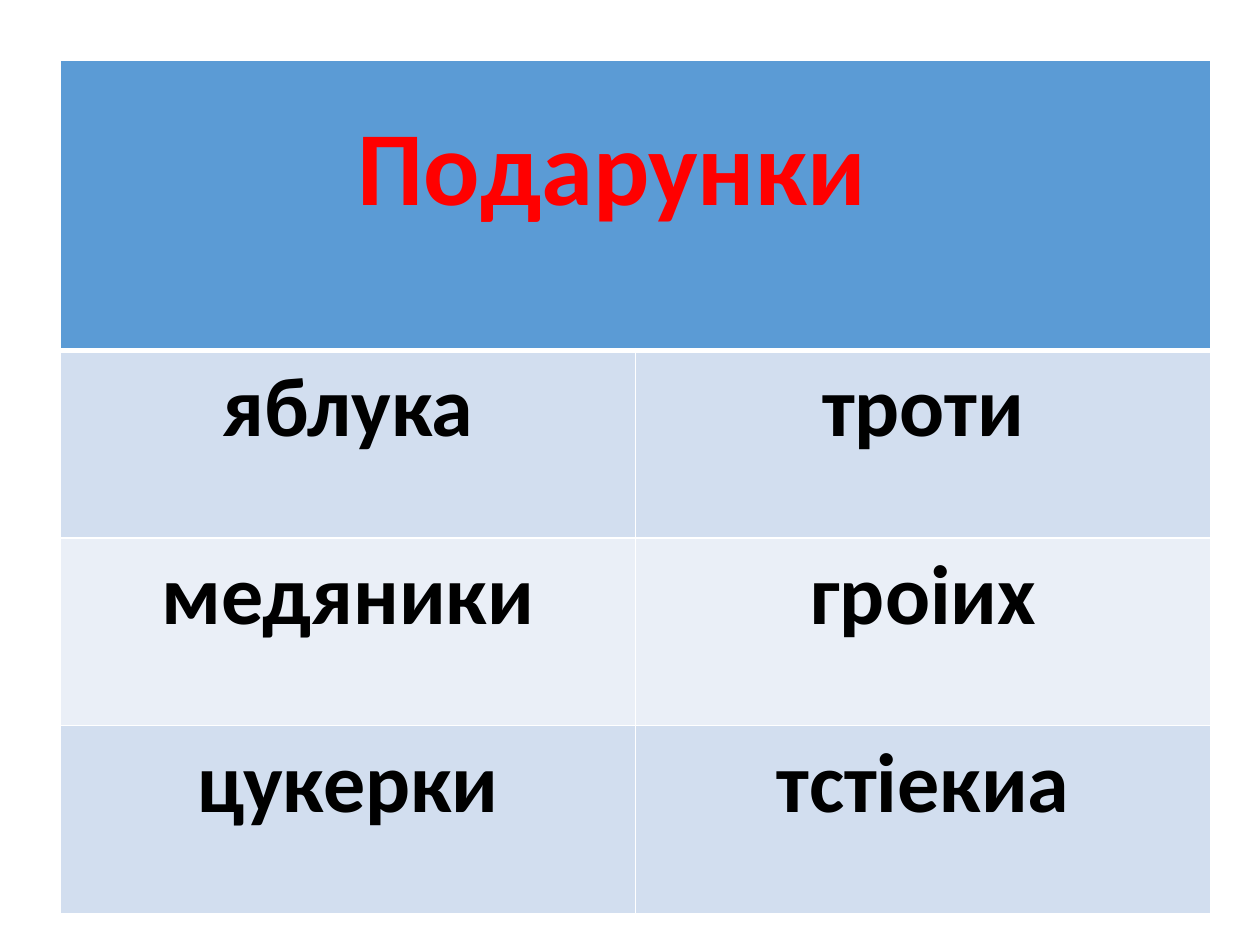
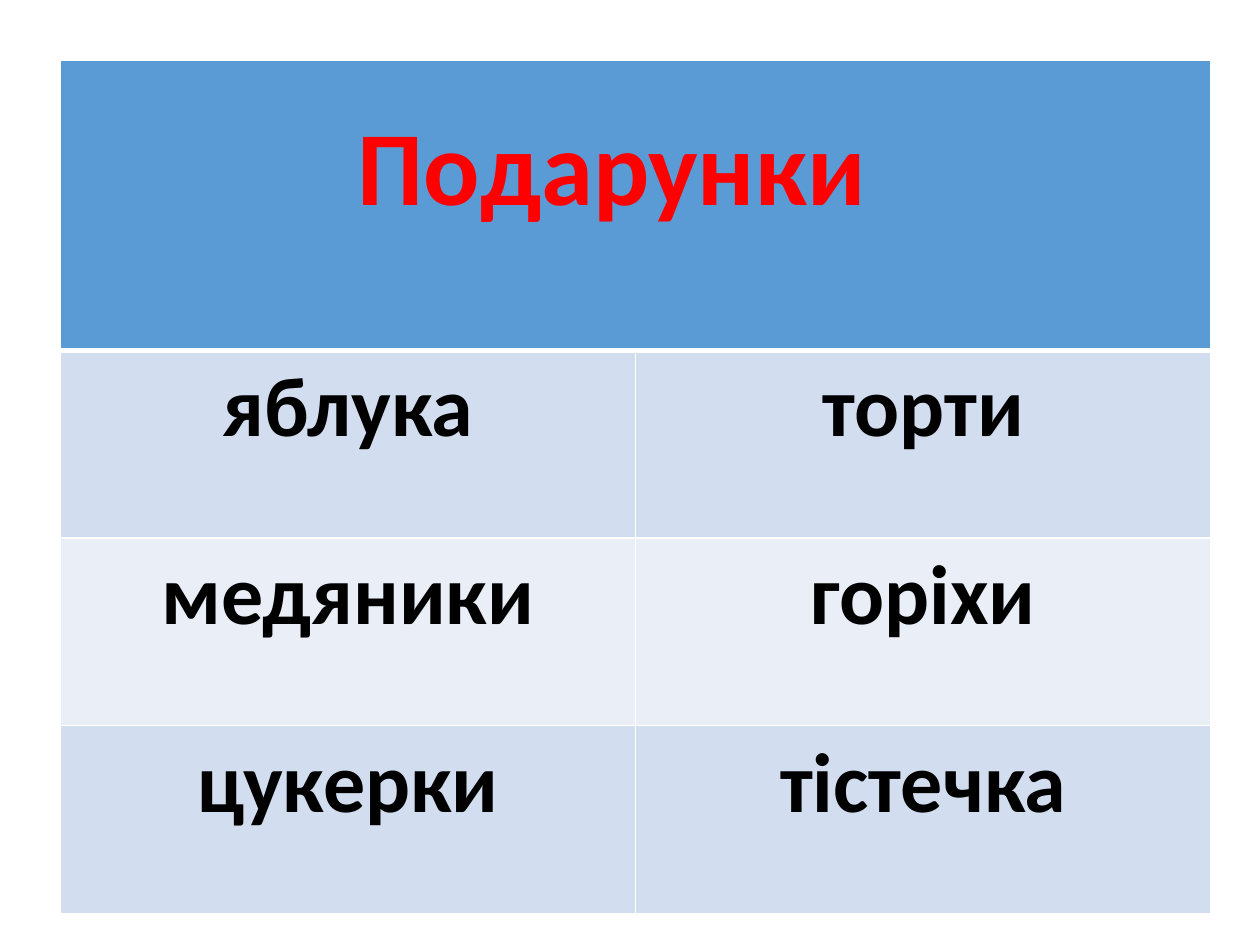
import pptx
import pptx.dml.color
import pptx.enum.text
import pptx.util
from lxml import etree
from pptx.oxml.ns import qn

Inches = pptx.util.Inches
Pt = pptx.util.Pt

HEADER_FILL = "5B9BD5"
BAND_FILLS = ["D2DEEF", "EAEFF7"]
BORDER = "FFFFFF"
HEADING = "Подарунки"
LEFT_WORDS = ["яблука", "медяники", "цукерки"]
RIGHT_WORDS = [
    ["троти", "гроіих", "тстіекиа"],
    ["торти", "горіхи", "тістечка"],
]


def rgb(hex_color):
    return pptx.dml.color.RGBColor.from_string(hex_color)


def format_cell(cell, text, size, color, fill, borders):
    properties = cell._tc.get_or_add_tcPr()
    for side, width in borders.items():
        line = etree.SubElement(properties, qn(f"a:ln{side}"), w=str(Pt(width)))
        solid = etree.SubElement(line, qn("a:solidFill"))
        etree.SubElement(solid, qn("a:srgbClr"), val=BORDER)
    cell.fill.solid()
    cell.fill.fore_color.rgb = rgb(fill)
    if text:
        cell.text = text
        paragraph = cell.text_frame.paragraphs[0]
        paragraph.alignment = pptx.enum.text.PP_ALIGN.CENTER
        paragraph.font.name = "Calibri"
        paragraph.font.size = Pt(size)
        paragraph.font.bold = True
        paragraph.font.color.rgb = rgb(color)


deck = pptx.Presentation()
deck.slide_width = Inches(10)
deck.slide_height = Inches(7.5)

for right_words in RIGHT_WORDS:
    slide = deck.slides.add_slide(deck.slide_layouts[6])
    gifts = slide.shapes.add_table(
        4, 2, Inches(0.48), Inches(0.48), Inches(9.13), Inches(6.77)
    ).table
    gifts.rows[0].height = Inches(2.3)
    for row in range(1, 4):
        gifts.rows[row].height = Inches(1.49)

    heading = gifts.cell(0, 0)
    heading.merge(gifts.cell(0, 1))
    for column, text in enumerate([HEADING, ""]):
        format_cell(gifts.cell(0, column), text, 60, "FF0000", HEADER_FILL,
                    {"L": 1, "R": 1, "T": 1, "B": 3})
    heading.margin_top = Inches(0.36)
    heading.margin_right = Inches(0.48)

    for row, words in enumerate(zip(LEFT_WORDS, right_words), start=1):
        for column, word in enumerate(words):
            format_cell(gifts.cell(row, column), word, 48, "000000",
                        BAND_FILLS[(row - 1) % 2],
                        {"L": 1, "R": 1, "T": 3 if row == 1 else 1, "B": 1})

deck.save("out.pptx")
